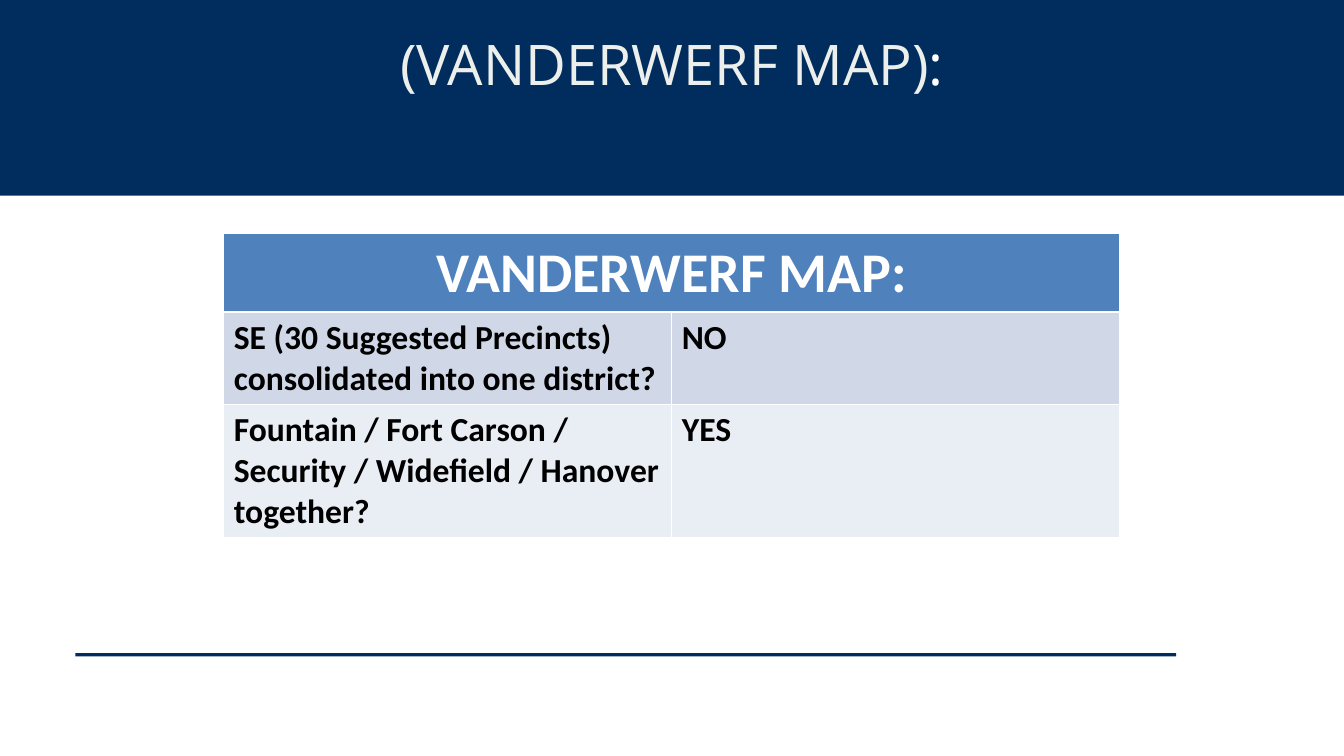
from pptx import Presentation
from pptx import util as u
from pptx.dml.color import RGBColor
from pptx.enum import shapes, text

NAVY = RGBColor(0x00, 0x2D, 0x5D)
BLUE = RGBColor(0x4F, 0x81, 0xBD)
BAND_DARK = RGBColor(0xD0, 0xD8, 0xE8)
BAND_LIGHT = RGBColor(0xE9, 0xED, 0xF4)
OFF_WHITE = RGBColor(0xEC, 0xEF, 0xEB)
WHITE = RGBColor(0xFF, 0xFF, 0xFF)
BLACK = RGBColor(0x00, 0x00, 0x00)

SLIDE_W, SLIDE_H = u.Cm(33.87), u.Cm(19.05)
FINDINGS = [
    ("SE (30 Suggested Precincts) consolidated into one district?", "NO"),
    ("Fountain / Fort Carson / Security / Widefield / Hanover together?", "YES"),
]


def add_run(paragraph, words, font, size, color, bold=False):
    run = paragraph.add_run()
    run.text = words
    run.font.name = font
    run.font.size = u.Pt(size)
    run.font.bold = bold
    run.font.color.rgb = color


def add_bar(slide, left, top, width, height):
    bar = slide.shapes.add_shape(shapes.MSO_SHAPE.RECTANGLE, left, top, width, height)
    bar.shadow.inherit = False
    bar.fill.solid()
    bar.fill.fore_color.rgb = NAVY
    bar.line.fill.background()


def add_header(slide, left, top, width, height):
    add_bar(slide, left, top, width, height)

    # Title, brought in front of the band
    heading = slide.shapes.title
    slide.shapes.element.append(heading.element)
    margin = u.Cm(0.82)
    heading.left, heading.top = left + margin, top + u.Cm(0.36)
    heading.width, heading.height = width - 2 * margin, u.Cm(1.96)
    frame = heading.text_frame
    frame.margin_left = frame.margin_right = 0
    frame.margin_top = frame.margin_bottom = 0
    frame.vertical_anchor = text.MSO_ANCHOR.TOP
    frame.auto_size = text.MSO_AUTO_SIZE.NONE
    line = frame.paragraphs[0]
    line.alignment = text.PP_ALIGN.CENTER
    line.line_spacing = u.Pt(58.7)
    add_run(line, "(VANDERWERF MAP)", "Open Sans", 40, OFF_WHITE)
    add_run(line, ":", "Open Sans", 40, WHITE)


def fill_cell(cell, words, size, color, background):
    cell.fill.solid()
    cell.fill.fore_color.rgb = background
    add_run(cell.text_frame.paragraphs[0], words, "Calibri", size, color, bold=True)


def add_findings(slide, left, top, width, row_height):
    rows = len(FINDINGS) + 1
    findings = slide.shapes.add_table(rows, 2, left, top, width, rows * row_height).table

    # Heading across both columns
    heading = findings.cell(0, 0)
    heading.merge(findings.cell(0, 1))
    fill_cell(heading, "VANDERWERF MAP:", 40, WHITE, BLUE)
    heading.text_frame.paragraphs[0].alignment = text.PP_ALIGN.CENTER

    # Questions and answers
    for row, finding in enumerate(FINDINGS, start=1):
        background = BAND_DARK if row % 2 else BAND_LIGHT
        for column, words in enumerate(finding):
            fill_cell(findings.cell(row, column), words, 24, BLACK, background)


def build_map_slide(deck):
    slide = deck.slides.add_slide(deck.slide_layouts[5])
    add_header(slide, 0, 0, SLIDE_W, u.Cm(4.93))
    add_findings(slide, u.Cm(5.64), u.Cm(5.89), u.Cm(22.58), u.Cm(1.04))
    # Footer rule
    add_bar(slide, u.Cm(1.9), u.Cm(16.46), u.Cm(27.74), u.Cm(0.08))


def main():
    deck = Presentation()
    deck.slide_width, deck.slide_height = SLIDE_W, SLIDE_H
    build_map_slide(deck)
    deck.save("out.pptx")


if __name__ == "__main__":
    main()
